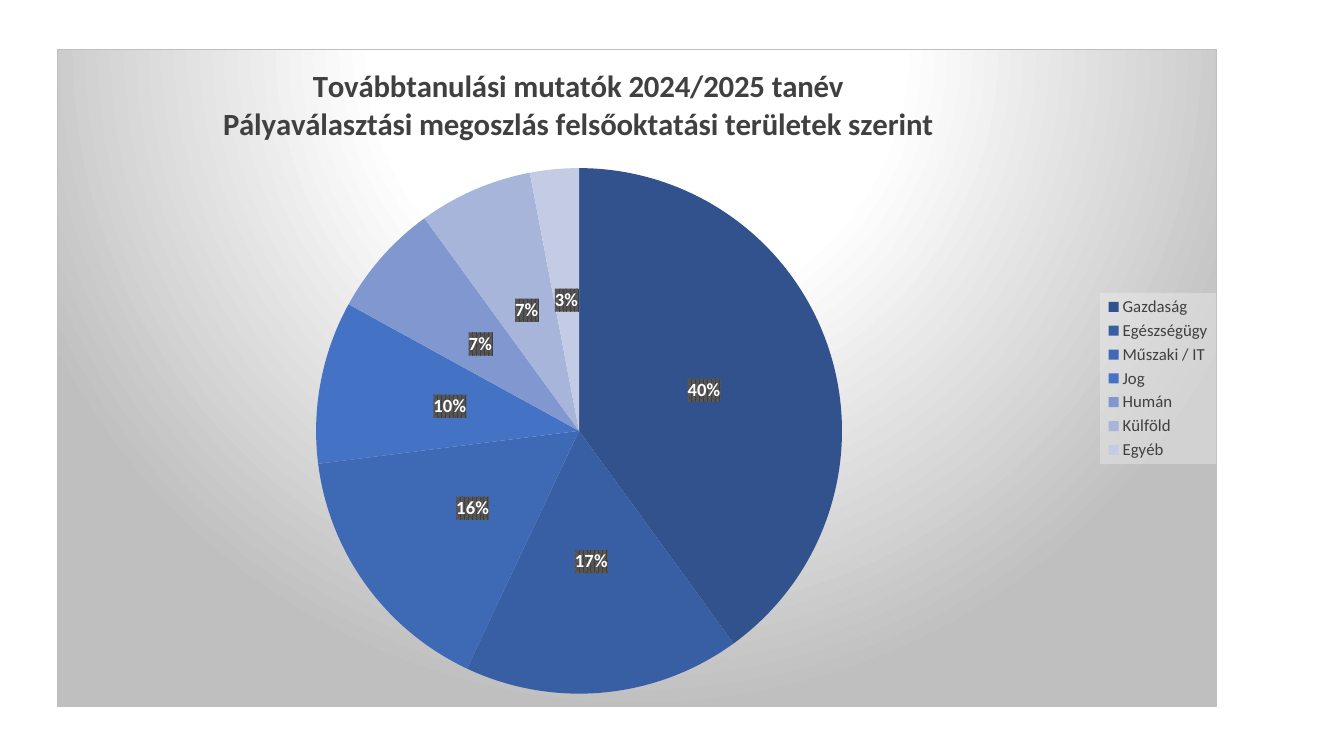
from dataclasses import dataclass
from typing import Any, NamedTuple

import lxml.etree
import pptx
import pptx.chart.data
import pptx.dml.color
import pptx.enum.chart
import pptx.oxml
import pptx.oxml.ns
import pptx.util

Pt = pptx.util.Pt


class Slice(NamedTuple):
    field: str
    percent: int
    color: str


class Area(NamedTuple):
    """Place inside the chart, as fractions of its size."""
    x: float
    y: float
    w: float | None = None
    h: float | None = None


@dataclass(frozen=True)
class Theme:
    font: str = "Calibri"
    title_size: float = 22
    label_size: float = 13.3
    legend_size: float = 12
    text: str = "404040"
    white: str = "FFFFFF"
    edge: str = "BFBFBF"
    label_stripe: str = "595959"
    legend_fill: str = "F2F2F2"


THEME = Theme()
TITLE_LINES = (
    "Továbbtanulási mutatók 2024/2025 tanév",
    "Pályaválasztási megoszlás felsőoktatási területek szerint",
)
SLICES = (
    Slice("Gazdaság", 40, "31528D"),
    Slice("Egészségügy", 17, "385FA3"),
    Slice("Műszaki / IT", 16, "3E69B4"),
    Slice("Jog", 10, "4472C4"),
    Slice("Humán", 7, "8197D0"),
    Slice("Külföld", 7, "A8B5DB"),
    Slice("Egyéb", 3, "C4CCE5"),
)
TITLE_AREA = Area(0.14, 0.02)
PIE_AREA = Area(0.22, 0.18, 0.46, 0.8)
LEGEND_AREA = Area(0.9, 0.37, 0.1, 0.26)


def color_xml(color: str, inner: str = "") -> str:
    return f'<a:srgbClr val="{color}">{inner}</a:srgbClr>'


def shape_properties(fill: str) -> Any:
    namespaces = pptx.oxml.ns.nsdecls("c", "a")
    return pptx.oxml.parse_xml(f"<c:spPr {namespaces}>{fill}</c:spPr>")


def set_area(parent: Any, area: Area, after: str | None = None) -> None:
    """Give a chart part a manual layout, after the named child or first."""
    qn = pptx.oxml.ns.qn
    for old in parent.findall(qn("c:layout")):
        parent.remove(old)
    layout = lxml.etree.Element(qn("c:layout"))
    manual = lxml.etree.SubElement(layout, qn("c:manualLayout"))

    def add(tag: str, value: object) -> None:
        lxml.etree.SubElement(manual, qn(f"c:{tag}")).set("val", str(value))

    if parent.tag == qn("c:plotArea"):
        add("layoutTarget", "inner")
    add("xMode", "edge")
    add("yMode", "edge")
    for tag, value in area._asdict().items():
        if value is not None:
            add(tag, value)
    if after:
        parent.find(qn(after)).addnext(layout)
    else:
        parent.insert(0, layout)


def set_font(font: Any, size: float, color: str, bold: bool = False) -> None:
    font.name = THEME.font
    font.size = Pt(size)
    font.bold = bold
    font.color.rgb = pptx.dml.color.RGBColor.from_string(color)


def add_pie(slide: Any) -> Any:
    data = pptx.chart.data.CategoryChartData()
    data.categories = [part.field for part in SLICES]
    data.add_series("Series 1", [part.percent for part in SLICES])
    chart = slide.shapes.add_chart(
        pptx.enum.chart.XL_CHART_TYPE.PIE,
        Pt(41), Pt(35.3), Pt(828), Pt(470), data,
    ).chart
    set_font(chart.font, 10, THEME.text)
    chart.plots[0].vary_by_categories = True
    for index, part in enumerate(SLICES):
        fill = chart.plots[0].series[0].points[index].format.fill
        fill.solid()
        fill.fore_color.rgb = pptx.dml.color.RGBColor.from_string(part.color)
    set_area(chart.element.xpath("c:chart/c:plotArea")[0], PIE_AREA)
    return chart


def format_background(chart: Any) -> None:
    stops = ((0, THEME.white), (39000, THEME.white), (100000, THEME.edge))
    stop_xml = "".join(
        f'<a:gs pos="{pos}">{color_xml(color)}</a:gs>' for pos, color in stops
    )
    background = shape_properties(
        f'<a:gradFill><a:gsLst>{stop_xml}</a:gsLst><a:path path="circle">'
        '<a:fillToRect l="50000" t="-80000" r="50000" b="180000"/>'
        '</a:path></a:gradFill>'
        f'<a:ln w="{Pt(0.75)}"><a:solidFill>{color_xml(THEME.edge)}</a:solidFill></a:ln>'
    )
    chart.element.xpath("c:chart")[0].addnext(background)


def format_title(chart: Any) -> None:
    chart.has_title = True
    heading = chart.chart_title.text_frame
    heading.text = "\n".join(TITLE_LINES)
    for line in heading.paragraphs:
        set_font(line.font, THEME.title_size, THEME.text, bold=True)
    set_area(chart.element.xpath("c:chart/c:title")[0], TITLE_AREA, "c:tx")


def format_labels(chart: Any) -> None:
    shares = chart.plots[0].series[0].data_labels
    shares.show_percentage = True
    shares.show_value = False
    shares.number_format = "0%"
    shares.number_format_is_linked = False
    shares.position = pptx.enum.chart.XL_LABEL_POSITION.CENTER
    set_font(shares.font, THEME.label_size, THEME.white, bold=True)
    stripes = shape_properties(
        f'<a:pattFill prst="pct75"><a:fgClr>{color_xml(THEME.text)}</a:fgClr>'
        f'<a:bgClr>{color_xml(THEME.label_stripe)}</a:bgClr></a:pattFill>'
    )
    chart.element.xpath(".//c:ser/c:dLbls/c:txPr")[0].addprevious(stripes)


def format_legend(chart: Any) -> None:
    chart.has_legend = True
    chart.legend.position = pptx.enum.chart.XL_LEGEND_POSITION.RIGHT
    chart.legend.include_in_layout = False
    set_font(chart.legend.font, THEME.legend_size, THEME.text)
    legend = chart.element.xpath("c:chart/c:legend")[0]
    set_area(legend, LEGEND_AREA, "c:legendPos")
    veil = color_xml(THEME.legend_fill, '<a:alpha val="39000"/>')
    legend.xpath("c:txPr")[0].addprevious(
        shape_properties(f"<a:solidFill>{veil}</a:solidFill>")
    )


def main() -> None:
    deck = pptx.Presentation()
    deck.slide_width, deck.slide_height = Pt(960), Pt(540)
    slide = deck.slides.add_slide(deck.slide_layouts[6])

    # Pie of study fields
    chart = add_pie(slide)
    format_background(chart)

    # Heading, shares and key
    format_title(chart)
    format_labels(chart)
    format_legend(chart)
    deck.save("out.pptx")


if __name__ == "__main__":
    main()
